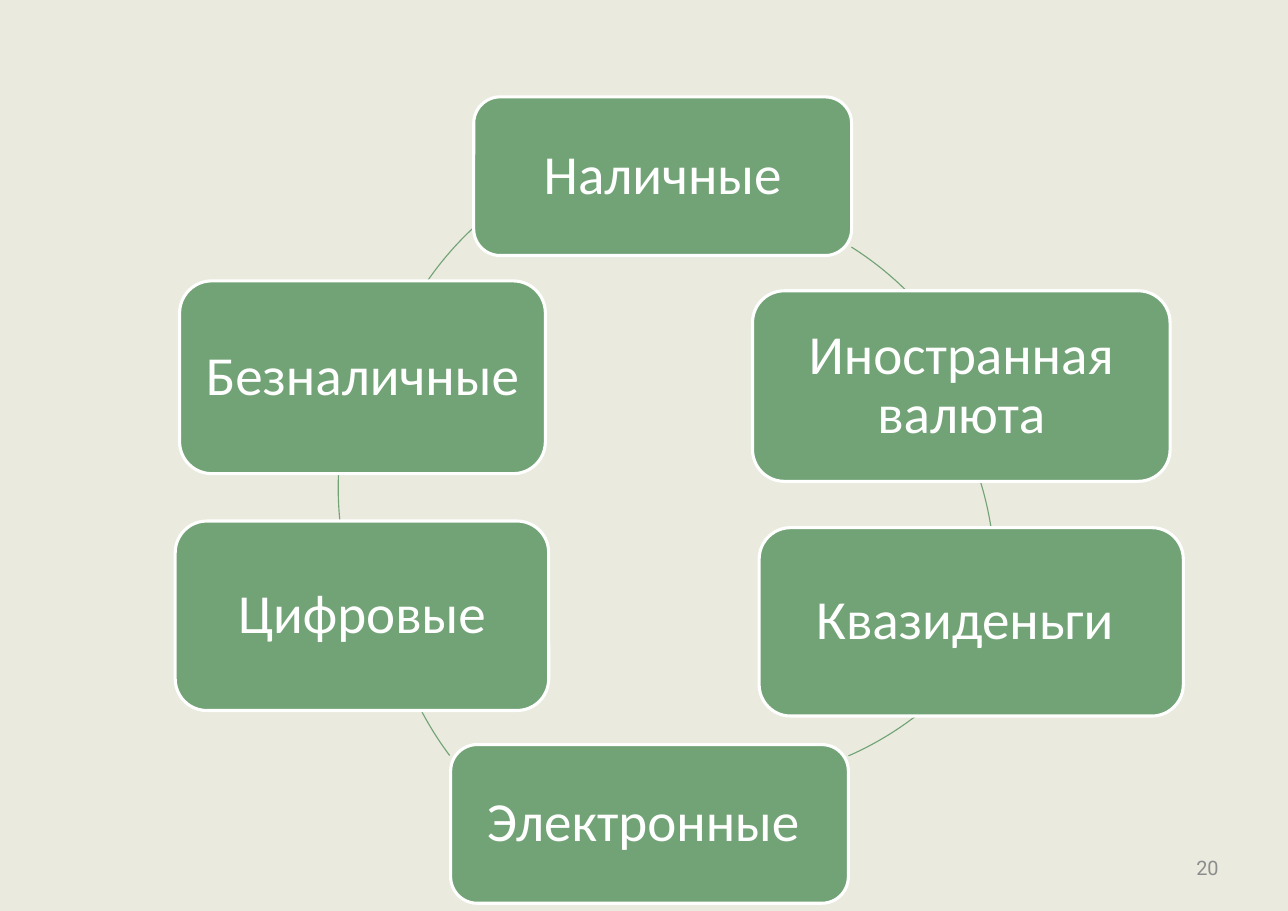
"""Build a slide showing six forms of money arranged around a cycle."""
from dataclasses import dataclass
from math import atan2, degrees

from pptx import Presentation
from pptx.dml.color import RGBColor
from pptx.enum.shapes import MSO_SHAPE
from pptx.enum.text import MSO_ANCHOR, PP_ALIGN
from pptx.util import Inches, Pt


@dataclass(frozen=True)
class Theme:
    background: RGBColor = RGBColor.from_string("EAEBDE")
    green: RGBColor = RGBColor.from_string("72A376")
    white: RGBColor = RGBColor.from_string("FFFFFF")
    gray: RGBColor = RGBColor.from_string("8C8C8C")
    label_font: str = "Calibri"
    number_font: str = "Roboto"
    label_size: Pt = Pt(36)
    number_size: Pt = Pt(13)


def write(shape, text, align, insets, font, size, color):
    tf = shape.text_frame
    tf.word_wrap = True
    tf.vertical_anchor = MSO_ANCHOR.MIDDLE
    tf.margin_left = tf.margin_right = Inches(insets[0])
    tf.margin_top = tf.margin_bottom = Inches(insets[1])
    tf.text = text
    p = tf.paragraphs[0]
    p.alignment = align
    r = p.runs[0]
    r.font.name, r.font.size, r.font.color.rgb = font, size, color
    return p


theme = Theme()
prs = Presentation()
prs.slide_width, prs.slide_height = Inches(11.69), Inches(8.27)
s = prs.slides.add_slide(prs.slide_layouts[6])
s.background.fill.solid()
s.background.fill.fore_color.rgb = theme.background

diameter = 5.88
arcs = [
    ((3.22, 1.79), (7.73, 2.24), (8.22, 2.63)),
    ((3.15, 2.3), (8.9, 4.37), (9, 4.79)),
    ((3.58, 1.23), (8.32, 6.5), (7.7, 6.86)),
    ((3.49, 2.15), (4.08, 6.86), (3.83, 6.46)),
    ((3.07, 1.49), (3.08, 4.73), (3.07, 4.31)),
    ((3.36, 1.28), (3.88, 2.55), (4.3, 2.07)),
]
for (left, top), *ends in arcs:
    sp = s.shapes.add_shape(MSO_SHAPE.ARC, Inches(left), Inches(top),
                            Inches(diameter), Inches(diameter))
    for i, (x, y) in enumerate(ends):
        angle = degrees(atan2(y - top - diameter / 2, x - left - diameter / 2)) % 360
        sp.adjustments[i] = angle * 0.6
    sp.shadow.inherit = False
    sp.fill.background()
    sp.line.color.rgb = theme.green
    sp.line.width = Pt(0.75)

money_forms = [
    ("Наличные", 4.3, 0.88, 3.43, 1.44),
    ("Иностранная валюта", 6.83, 2.64, 3.79, 1.73),
    ("Квазиденьги ", 6.89, 4.79, 3.85, 1.71),
    ("Электронные ", 4.09, 6.76, 3.61, 1.44),
    ("Цифровые", 1.59, 4.73, 3.39, 1.72),
    ("Безналичные ", 1.63, 2.55, 3.32, 1.75),
]
for label, *box in money_forms:
    sp = s.shapes.add_shape(MSO_SHAPE.ROUNDED_RECTANGLE, *map(Inches, box))
    sp.shadow.inherit = False
    sp.fill.solid()
    sp.fill.fore_color.rgb = theme.green
    sp.line.color.rgb = theme.white
    sp.line.width = Pt(2)
    p = write(sp, label, PP_ALIGN.CENTER, (0.15, 0.15),
              theme.label_font, theme.label_size, theme.white)
    p.line_spacing = 0.9

sp = s.shapes.add_textbox(Inches(8.44), Inches(7.66), Inches(2.73), Inches(0.44))
write(sp, "20", PP_ALIGN.RIGHT, (0.11, 0.05),
      theme.number_font, theme.number_size, theme.gray)

prs.save("out.pptx")
